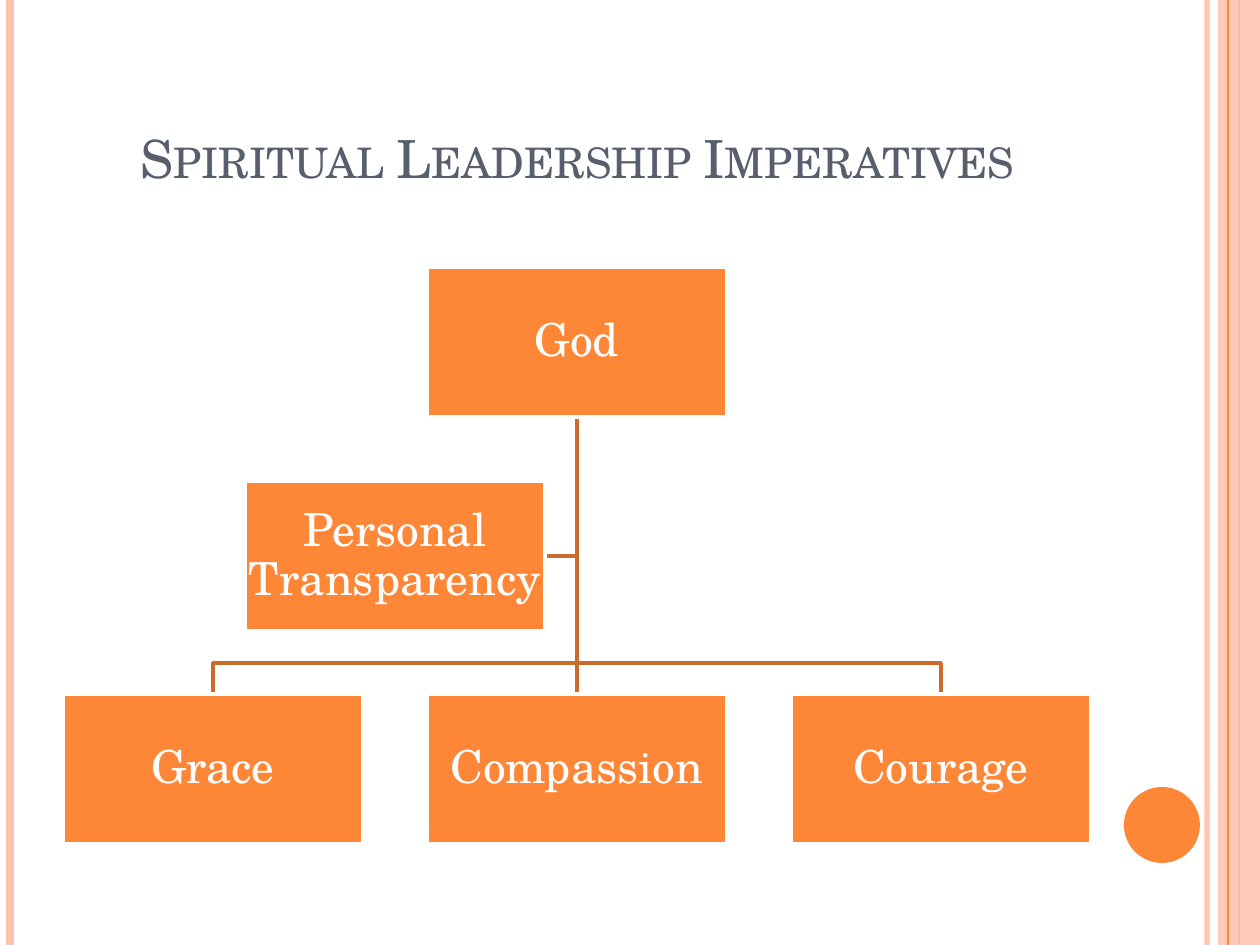
from dataclasses import dataclass

from lxml.etree import SubElement
from pptx import Presentation
from pptx.dml.color import RGBColor
from pptx.enum.shapes import MSO_CONNECTOR, MSO_SHAPE
from pptx.enum.text import MSO_ANCHOR, MSO_AUTO_SIZE, PP_ALIGN
from pptx.oxml.ns import qn
from pptx.util import Emu, Pt

EMU_PER_PX = 914400 / 126
FONT = "TeX Gyre Schola"
COLORS = {
    "white": "FFFFFF",
    "orange": "FE8637",
    "peach": "FEC3AE",
    "rust": "CB6B2C",
    "slate": "575F6D",
}

BOX_WIDTH, BOX_HEIGHT = 300, 150
COLUMN_LEFT, COLUMN_PITCH = 63, 364
TOP_ROW, ASSISTANT_ROW, BOTTOM_ROW = 267, 481, 694
BUS_Y = 663


@dataclass(frozen=True)
class Node:
    text: str
    left: int
    top: int

    @property
    def center(self) -> int:
        return self.left + BOX_WIDTH // 2

    @property
    def middle(self) -> int:
        return self.top + BOX_HEIGHT // 2


@dataclass(frozen=True)
class Stripe:
    x: int
    width: float
    color: str
    opacity: int = 100


ROOT = Node("God", COLUMN_LEFT + COLUMN_PITCH, TOP_ROW)
ASSISTANT = Node("Personal Transparency", 245, ASSISTANT_ROW)
CHILDREN = [
    Node(text, COLUMN_LEFT + column * COLUMN_PITCH, BOTTOM_ROW)
    for column, text in enumerate(["Grace", "Compassion", "Courage"])
]
BACK_STRIPES = [
    Stripe(1207, 3, "peach", 93),
    Stripe(10, 4.5, "peach"),
    Stripe(1239, 1.5, "orange"),
]
FRONT_STRIPE = Stripe(1228, 0.75, "orange")


def px(value: int) -> Emu:
    return Emu(round(value * EMU_PER_PX))


def rgb(name: str) -> RGBColor:
    return RGBColor.from_string(COLORS[name])


def set_opacity(fill, percent: int) -> None:
    color = fill._xPr.find(qn("a:solidFill"))[0]
    SubElement(color, qn("a:alpha")).set("val", str(percent * 1000))


def style_line(line, color: str, width: float) -> None:
    line.color.rgb = rgb(color)
    line.width = Pt(width)


def add_line(page, x1: int, y1: int, x2: int, y2: int, color: str, width: float):
    line = page.shapes.add_connector(
        MSO_CONNECTOR.STRAIGHT, px(x1), px(y1), px(x2), px(y2))
    style_line(line.line, color, width)
    SubElement(line._element.spPr, qn("a:effectLst"))
    return line


def add_stripe(page, stripe: Stripe) -> None:
    line = add_line(page, stripe.x, 0, stripe.x, 945, stripe.color, stripe.width)
    if stripe.opacity < 100:
        set_opacity(line.line.fill, stripe.opacity)


def add_filled(page, kind, left: int, top: int, width: int, height: int, color: str):
    shape = page.shapes.add_shape(kind, px(left), px(top), px(width), px(height))
    shape.shadow.inherit = False
    shape.fill.solid()
    shape.fill.fore_color.rgb = rgb(color)
    shape.line.fill.background()
    return shape


def style_paragraph(para, size: int, color: str) -> None:
    para.alignment = PP_ALIGN.CENTER
    para.font.name = FONT
    para.font.size = Pt(size)
    para.font.color.rgb = rgb(color)


def add_box(page, node: Node):
    box = add_filled(page, MSO_SHAPE.RECTANGLE, node.left, node.top,
                     BOX_WIDTH, BOX_HEIGHT, "orange")
    style_line(box.line, "white", 2)
    frame = box.text_frame
    frame.word_wrap = True
    frame.vertical_anchor = MSO_ANCHOR.MIDDLE
    frame.margin_left = frame.margin_right = px(2)
    frame.margin_top = frame.margin_bottom = px(2)
    para = frame.paragraphs[0]
    para.text = node.text
    para.line_spacing = 0.9
    style_paragraph(para, 26, "white")
    return box


def add_branch(page, parent: Node, child: Node) -> None:
    """Draw a right-angled line from the parent, along the bus, to the child."""
    builder = page.shapes.build_freeform(
        parent.center, parent.top + BOX_HEIGHT, scale=EMU_PER_PX)
    builder.add_line_segments(
        [(parent.center, BUS_Y), (child.center, BUS_Y), (child.center, child.top)],
        close=False)
    branch = builder.convert_to_shape()
    branch.shadow.inherit = False
    branch.fill.background()
    style_line(branch.line, "rust", 2)


def add_decoration(page) -> None:
    for stripe in BACK_STRIPES:
        add_stripe(page, stripe)
    band = add_filled(page, MSO_SHAPE.RECTANGLE, 1218, 0, 42, 945, "peach")
    set_opacity(band.fill, 87)
    add_stripe(page, FRONT_STRIPE)
    add_filled(page, MSO_SHAPE.OVAL, 1124, 787, 76, 76, "orange")


def set_title(page, text: str) -> None:
    title = page.shapes.title
    title.left, title.top, title.width, title.height = map(px, (63, 38, 1029, 157))
    frame = title.text_frame
    frame.word_wrap = True
    frame.auto_size = MSO_AUTO_SIZE.NONE
    frame.vertical_anchor = MSO_ANCHOR.BOTTOM
    para = frame.paragraphs[0]
    para.text = text
    style_paragraph(para, 30, "slate")
    para.font._element.set("cap", "small")


def add_chart_tree(page) -> None:
    left_child, middle_child, right_child = CHILDREN
    stub = add_line(page, ASSISTANT.left + BOX_WIDTH, ASSISTANT.middle,
                    ROOT.center, ASSISTANT.middle, "rust", 2)
    add_branch(page, ROOT, right_child)
    stem = add_line(page, ROOT.center, ROOT.top + BOX_HEIGHT,
                    middle_child.center, middle_child.top, "rust", 2)
    add_branch(page, ROOT, left_child)

    boxes = {node: add_box(page, node) for node in [ROOT, *CHILDREN, ASSISTANT]}
    stem.begin_connect(boxes[ROOT], 2)
    stem.end_connect(boxes[middle_child], 0)
    stub.begin_connect(boxes[ASSISTANT], 3)


def main() -> None:
    deck = Presentation()
    deck.slide_width, deck.slide_height = px(1260), px(945)
    page = deck.slides.add_slide(deck.slide_layouts[5])
    add_decoration(page)
    set_title(page, "Spiritual Leadership Imperatives")
    add_chart_tree(page)
    deck.save("out.pptx")


if __name__ == "__main__":
    main()
